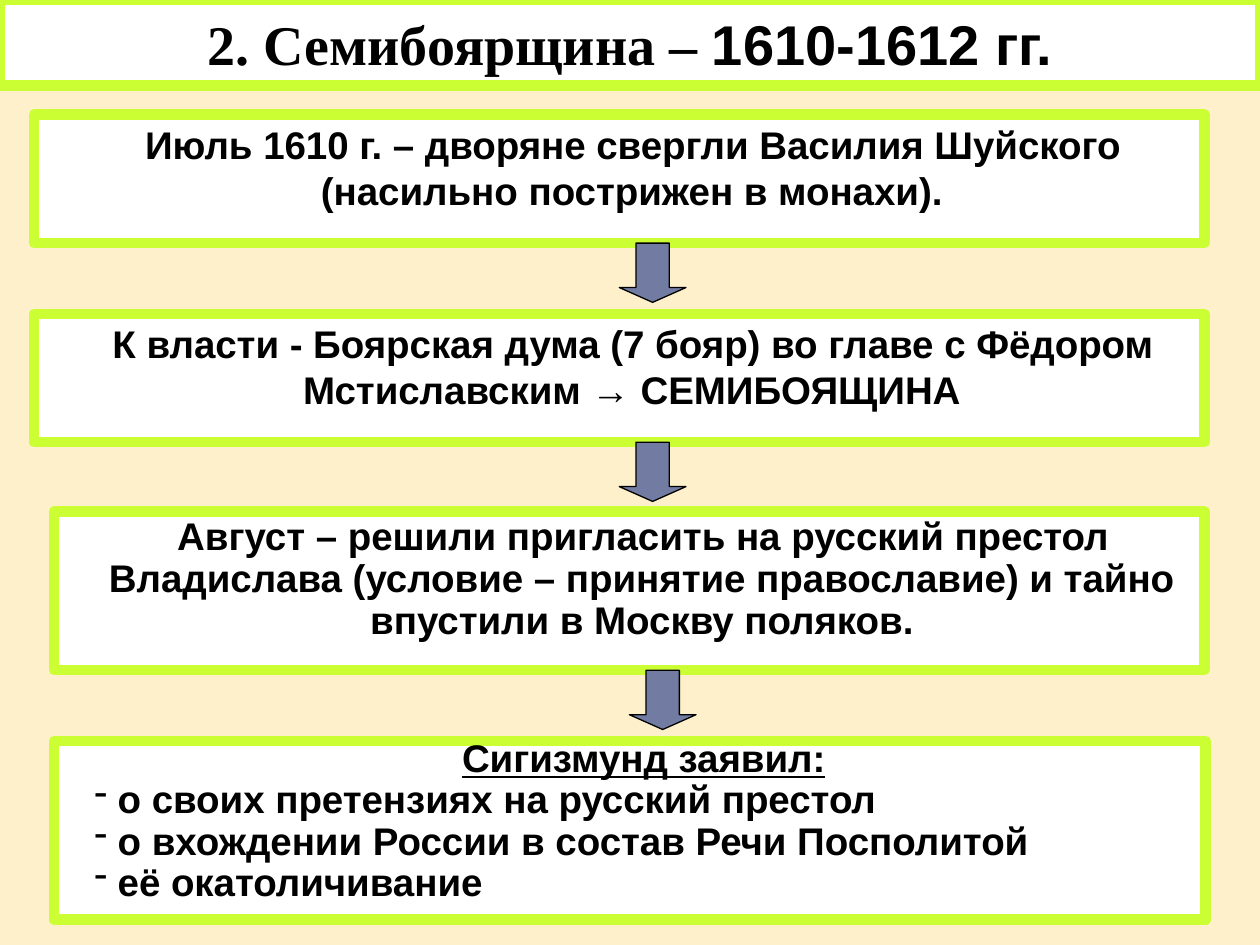
from lxml import etree
from pptx import Presentation
from pptx.dml.color import RGBColor
from pptx.enum.shapes import MSO_SHAPE
from pptx.enum.text import MSO_ANCHOR, PP_ALIGN
from pptx.oxml.ns import qn
from pptx.util import Inches, Pt

RECTANGLE, DOWN_ARROW = MSO_SHAPE.RECTANGLE, MSO_SHAPE.DOWN_ARROW
TOP, MIDDLE = MSO_ANCHOR.TOP, MSO_ANCHOR.MIDDLE
CENTER, LEFT = PP_ALIGN.CENTER, PP_ALIGN.LEFT

CREAM = RGBColor(0xFD, 0xF0, 0xCA)
WHITE = RGBColor(0xFF, 0xFF, 0xFF)
LIME = RGBColor(0xCC, 0xFF, 0x33)
SLATE = RGBColor(0x72, 0x7C, 0xA3)
BLACK = RGBColor(0, 0, 0)

COLUMNS, ROWS = 100, 75
ARROW_WIDTH, ARROW_HEIGHT = 5.3, 4.7

EVENTS = [
    ((2.7, 9.1, 92.9, 10.2), 1,
     "Июль 1610 г. – дворяне свергли Василия Шуйского (насильно пострижен в монахи)."),
    ((2.7, 24.9, 92.9, 10.2), 1,
     "К власти - Боярская дума (7 бояр) во главе с Фёдором Мстиславским → СЕМИБОЯЩИНА"),
    ((4.3, 40.6, 91.3, 12.6), 0.9,
     "Август – решили пригласить на русский престол Владислава "
     "(условие – принятие православие) и тайно впустили в Москву поляков."),
]
CLAIMS_AREA = (4.3, 58.8, 91.4, 14.2)
CLAIMS = [
    " о своих претензиях на русский престол",
    " о вхождении России в состав Речи Посполитой",
    " её окатоличивание",
]


class FlowSlide:
    def __init__(self, presentation):
        self.slide = presentation.slides.add_slide(presentation.slide_layouts[6])
        self.column = presentation.slide_width / COLUMNS
        self.row = presentation.slide_height / ROWS
        background = self.slide.background.fill
        background.solid()
        background.fore_color.rgb = CREAM

    def figure(self, kind, area, fill, outline, weight):
        left, top, width, height = area
        figure = self.slide.shapes.add_shape(
            kind, round(left * self.column), round(top * self.row),
            round(width * self.column), round(height * self.row))
        figure.shadow.inherit = False
        figure.fill.solid()
        figure.fill.fore_color.rgb = fill
        figure.line.color.rgb = outline
        figure.line.width = Pt(weight)
        return figure

    def box(self, area, anchor=TOP):
        frame = self.figure(RECTANGLE, area, WHITE, LIME, 6).text_frame
        frame.word_wrap = True
        frame.vertical_anchor = anchor
        return frame

    def arrow_below(self, area):
        left, top, width, height = area
        place = (left + width / 2, top + height, ARROW_WIDTH, ARROW_HEIGHT)
        arrow = self.figure(DOWN_ARROW, place, SLATE, BLACK, 0.75)
        arrow.adjustments[0] = 0.5
        arrow.adjustments[1] = 0.25

    def run(self, paragraph, text, size=22, font="Arial", underline=False):
        run = paragraph.add_run()
        run.text = text
        run.font.size = Pt(size)
        run.font.name = font
        run.font.bold = True
        run.font.underline = underline
        run.font.color.rgb = BLACK

    def body(self, paragraph, text, spacing, align=CENTER, bullet=None, underline=False):
        paragraph.alignment = align
        paragraph.line_spacing = float(spacing)
        paragraph.space_before = Pt(5)
        properties = paragraph._p.get_or_add_pPr()
        properties.set("marL", str(Inches(0.2)))
        properties.set("indent", str(Inches(0.02)))
        if bullet:
            etree.SubElement(properties, qn("a:buChar")).set("char", bullet)
        self.run(paragraph, text, underline=underline)

    def title(self):
        heading = self.box((0, 0, COLUMNS, 6.8), MIDDLE).paragraphs[0]
        heading.alignment = CENTER
        self.run(heading, "2. Семибоярщина – ", 32, "Times New Roman")
        self.run(heading, "1610-1612 гг.", 32)

    def claims(self):
        frame = self.box(CLAIMS_AREA)
        self.body(frame.paragraphs[0], "Сигизмунд заявил:", 0.7, underline=True)
        for claim in CLAIMS:
            self.body(frame.add_paragraph(), claim, 0.7, LEFT, "-")


def main():
    presentation = Presentation()
    presentation.slide_width = Inches(10)
    presentation.slide_height = Inches(7.5)
    flow = FlowSlide(presentation)
    flow.title()
    for area, spacing, event in EVENTS:
        flow.body(flow.box(area).paragraphs[0], event, spacing)
    flow.claims()
    for area, _, _ in EVENTS:
        flow.arrow_below(area)
    presentation.save("out.pptx")


if __name__ == "__main__":
    main()
